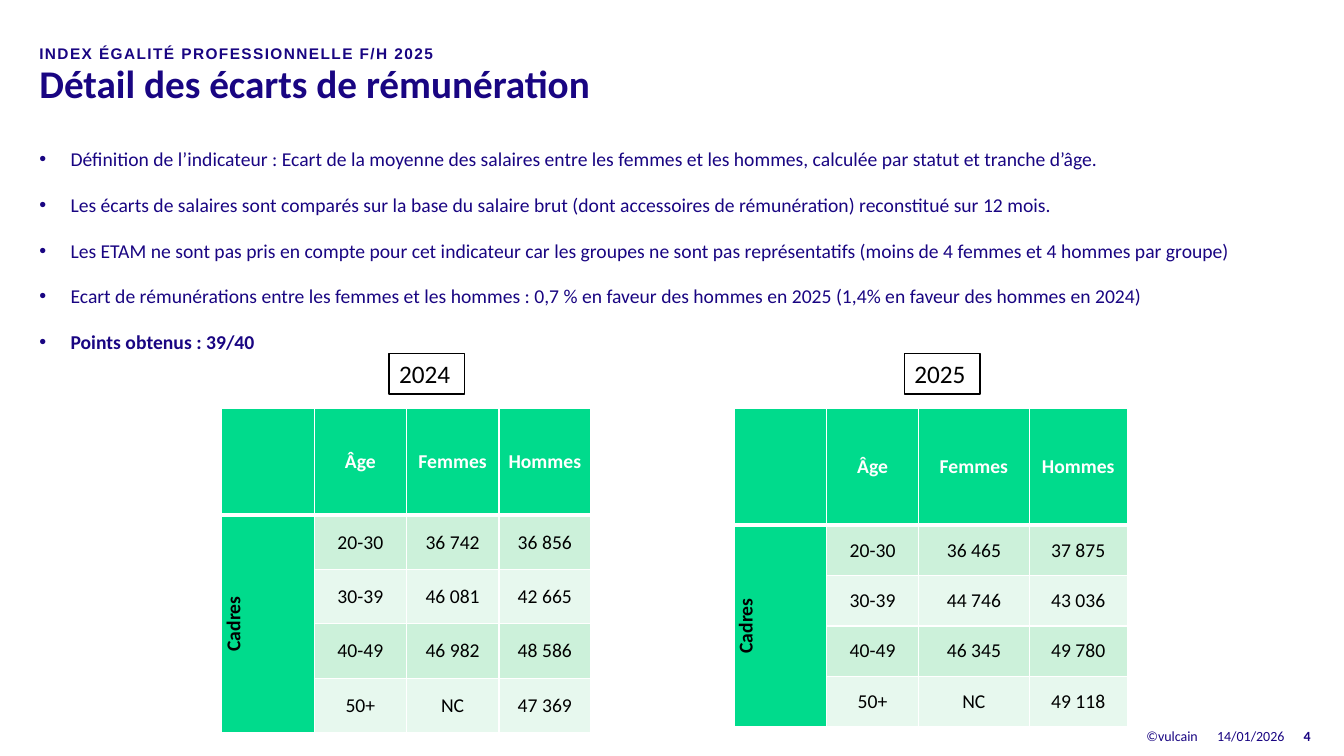
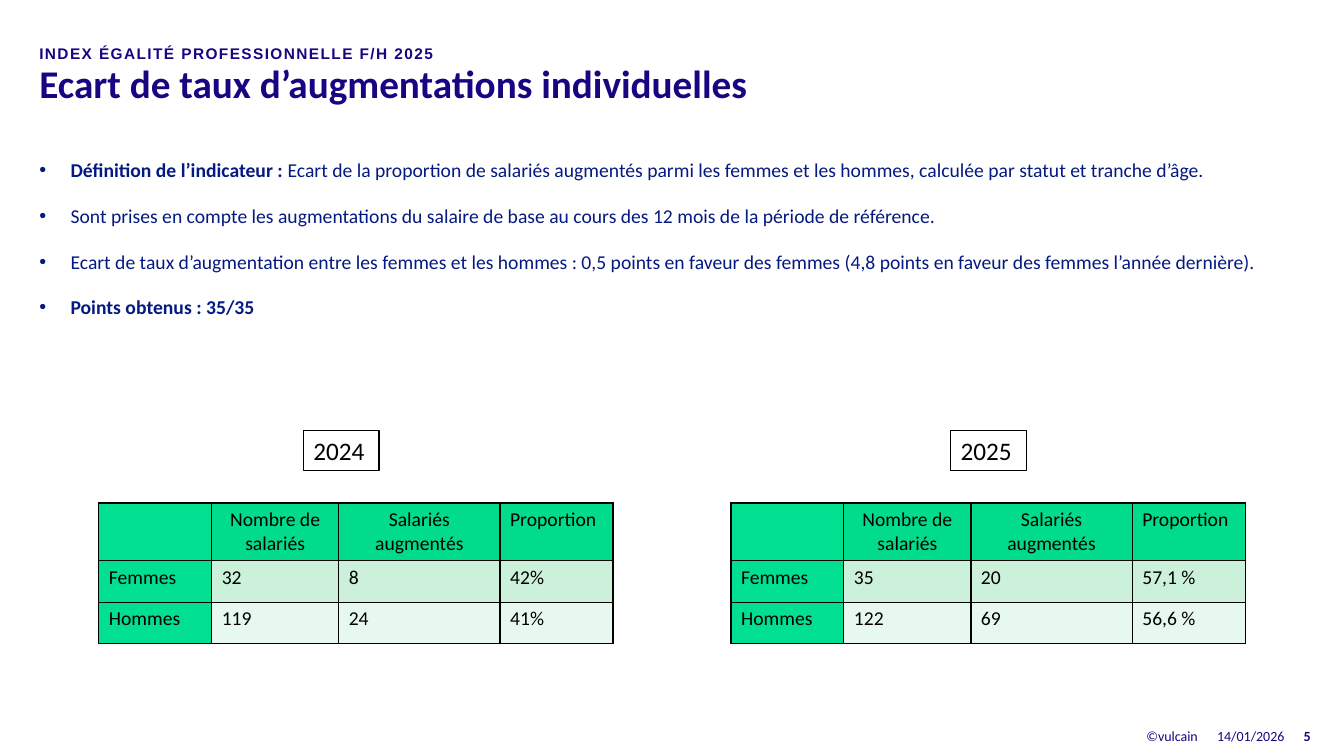
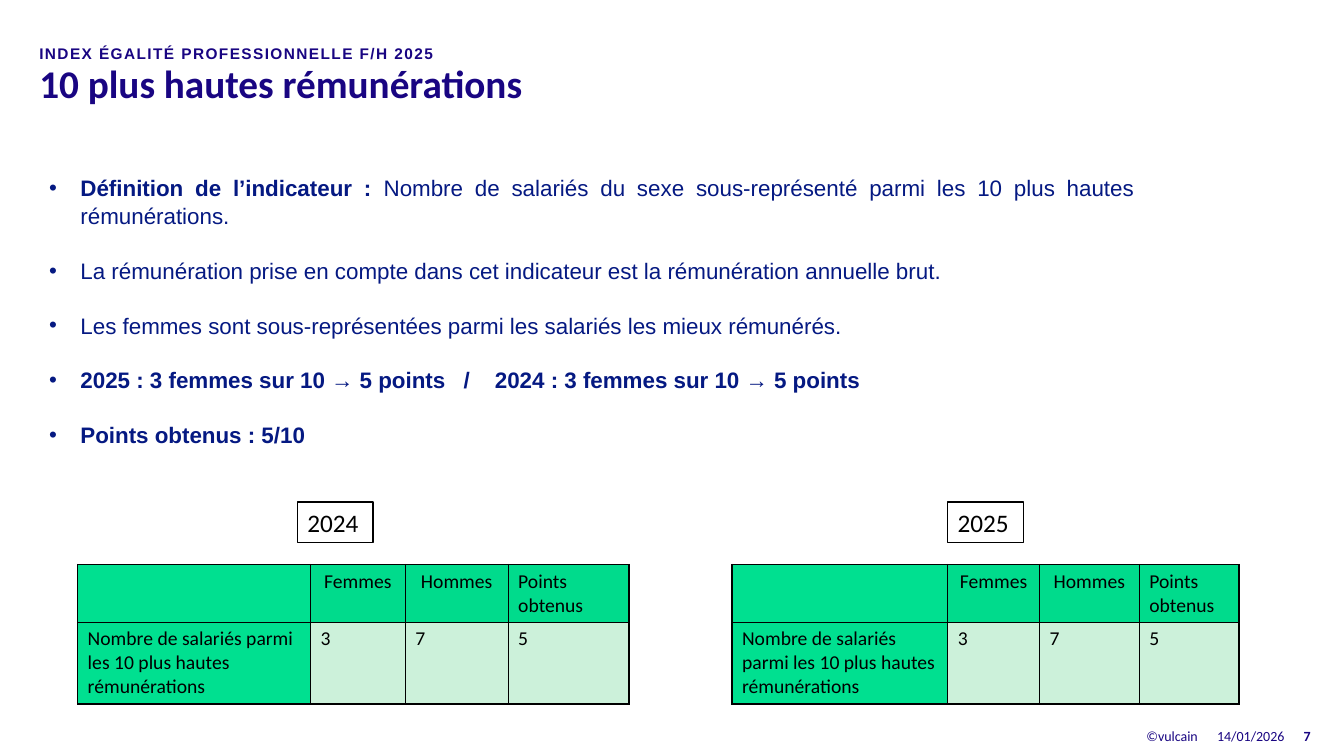
import pptx
import pptx.dml.color
import pptx.enum.shapes
import pptx.enum.text
import pptx.oxml
import pptx.oxml.ns
import pptx.util

Inches = pptx.util.Inches
Pt = pptx.util.Pt
ALIGN = pptx.enum.text.PP_ALIGN
ANCHOR = pptx.enum.text.MSO_ANCHOR
NS = pptx.oxml.ns.nsdecls("a")

COLORS = {
    "navy": "190582", "blue": "051982", "black": "000000", "white": "FFFFFF",
    "green": "00DB8C", "bright": "00E090", "band": "CCF1DA", "pale": "E7F8EE",
}

FONTS = {
    "title": ({"name": "Calibri", "size": Pt(28), "bold": True}, "navy"),
    "eyebrow": ({"name": "Arial", "size": Pt(11), "bold": True}, "navy"),
    "footer": ({"name": "Calibri", "size": Pt(10), "bold": False}, "navy"),
    "number": ({"name": "Calibri", "size": Pt(10), "bold": True}, "navy"),
    "year": ({"name": "Calibri", "size": Pt(18), "bold": False}, "black"),
    "cell": ({"name": "Calibri", "size": Pt(14), "bold": False}, "black"),
    "head": ({"name": "Calibri", "size": Pt(14), "bold": True}, "white"),
    "side": ({"name": "Calibri", "size": Pt(14), "bold": True}, "black"),
    "body": ({"name": "Calibri", "size": Pt(14)}, "navy"),
    "body_blue": ({"name": "Calibri", "size": Pt(14)}, "blue"),
    "body_arial": ({"name": "Arial", "size": Pt(16)}, "blue"),
}


class Deck:
    """Builds slides in one shared style."""

    def __init__(self):
        self.prs = pptx.Presentation()
        self.prs.slide_width = Inches(13.33)
        self.prs.slide_height = Inches(7.5)
        self.s = None

    def rgb(self, color):
        return pptx.dml.color.RGBColor.from_string(COLORS[color])

    def run(self, p, text, font, **extra):
        values, color = FONTS[font]
        r = p.add_run()
        r.text = text
        for key, value in {**values, **extra}.items():
            setattr(r.font, key, value)
        r.font.color.rgb = self.rgb(color)
        return r

    def frame(self, tf, margin=0, anchor=ANCHOR.TOP):
        values = {"margin_left": Inches(margin), "margin_right": Inches(margin),
                  "margin_top": Inches(margin / 2), "margin_bottom": Inches(margin / 2),
                  "word_wrap": True, "vertical_anchor": anchor,
                  "auto_size": pptx.enum.text.MSO_AUTO_SIZE.NONE}
        for key, value in values.items():
            setattr(tf, key, value)
        return tf

    def box(self, at, margin=0, anchor=ANCHOR.TOP):
        sp = self.s.shapes.add_textbox(*map(Inches, at))
        return self.frame(sp.text_frame, margin, anchor)

    def page(self, title, number):
        self.s = self.prs.slides.add_slide(self.prs.slide_layouts[5])
        sp = self.s.shapes.title
        sp.left, sp.top, sp.width, sp.height = map(Inches, (0.39, 0.61, 12.47, 1.05))
        p = self.frame(sp.text_frame).paragraphs[0]
        p.alignment, p.line_spacing = ALIGN.LEFT, Pt(32)
        self.run(p, title, "title")
        p = self.box((0.39, 0.31, 6.27, 0.28)).paragraphs[0]
        p.line_spacing = Pt(22.6)
        r = self.run(p, "INDEX ÉGALITÉ PROFESSIONNELLE F/H 2025", "eyebrow")
        r.font._element.set("spc", "100")
        for text, left, width, align, font in (
                ("©vulcain", 7.26, 4.62, ALIGN.RIGHT, "footer"),
                ("14/01/2026", 11.95, 0.91, ALIGN.CENTER, "footer"),
                (str(number), 12.93, 0.4, ALIGN.LEFT, "number")):
            p = self.box((left, 7.1, width, 0.4), anchor=ANCHOR.MIDDLE).paragraphs[0]
            p.alignment = align
            self.run(p, text, font)

    def bullets(self, at, items, font, align=ALIGN.JUSTIFY, margin=0,
                line=Pt(22.6), gap=10, tabs=()):
        tf = self.box(at, margin)
        for i, (lead, rest) in enumerate(items):
            p = tf.add_paragraph() if i else tf.paragraphs[0]
            pPr = p._p.get_or_add_pPr()
            pPr.set("marL", str(Inches(0.31)))
            pPr.set("indent", str(Inches(-0.31)))
            pPr.append(pptx.oxml.parse_xml(f'<a:buFont {NS} typeface="Arial"/>'))
            pPr.append(pptx.oxml.parse_xml(f'<a:buChar {NS} char="•"/>'))
            if "\t" in lead:
                stops = "".join(f'<a:tab pos="{Inches(t)}" algn="l"/>' for t in tabs)
                pPr.append(pptx.oxml.parse_xml(f"<a:tabLst {NS}>{stops}</a:tabLst>"))
            p.alignment, p.line_spacing = align, line
            if i:
                p.space_before = Pt(gap)
            for text, bold in ((lead, True), (rest, False)):
                if text:
                    self.run(p, text, font, bold=bold)

    def year(self, text, left, top):
        sp = self.s.shapes.add_shape(pptx.enum.shapes.MSO_SHAPE.RECTANGLE,
                                     *map(Inches, (left, top, 0.75, 0.4)))
        sp.shadow.inherit = False
        sp.fill.solid()
        sp.fill.fore_color.rgb = self.rgb("white")
        sp.line.color.rgb = self.rgb("black")
        sp.line.width = Pt(1)
        p = self.frame(sp.text_frame, 0.1).paragraphs[0]
        p.alignment = ALIGN.LEFT
        self.run(p, text, "year")

    def grid(self, left, top, cols, heights):
        shape = self.s.shapes.add_table(
            len(heights), len(cols), Inches(left), Inches(top),
            Inches(sum(cols)), Inches(sum(heights)))
        table = shape.table
        table.first_row = table.horz_banding = False
        for column, width in zip(table.columns, cols):
            column.width = Inches(width)
        for row, height in zip(table.rows, heights):
            row.height = Inches(height)
        return table

    def cell(self, cell, text, font, fill, line, align, thick=""):
        tcPr = cell._tc.get_or_add_tcPr()
        for side in "LRTB":
            width = Pt(3 if side == thick else 1)
            tcPr.append(pptx.oxml.parse_xml(
                f'<a:ln{side} {NS} w="{width}"><a:solidFill>'
                f'<a:srgbClr val="{COLORS[line]}"/></a:solidFill></a:ln{side}>'))
        cell.fill.solid()
        cell.fill.fore_color.rgb = self.rgb(fill)
        p = cell.text_frame.paragraphs[0]
        p.alignment = align
        if text:
            self.run(p, text, font)

    def pay_table(self, left, cols, heights, rows):
        table = self.grid(left, 4.05, cols, heights)
        data = [("", "Âge", "Femmes", "Hommes")]
        data += [("" if i else "Cadres", *row) for i, row in enumerate(rows)]
        for i, row in enumerate(data):
            for j, text in enumerate(row):
                cell = table.cell(i, j)
                for key in ("left", "right", "top", "bottom"):
                    setattr(cell, "margin_" + key, 0)
                cell.vertical_anchor = ANCHOR.MIDDLE
                font = "head" if i == 0 else "side" if j == 0 else "cell"
                fill = "green" if 0 in (i, j) else "band" if i % 2 else "pale"
                self.cell(cell, text, font, fill, "white", ALIGN.CENTER,
                          {0: "B", 1: "T"}.get(i, ""))
        side = table.cell(1, 0)
        side.merge(table.cell(len(rows), 0))
        side._tc.tcPr.set("vert", "vert270")

    def count_table(self, left, top, cols, heights, rows):
        table = self.grid(left, top, cols, heights)
        for i, row in enumerate(rows):
            for j, text in enumerate(row):
                fill = ("bright" if j == 0 else "green" if i == 0
                        else "band" if i % 2 else "pale")
                align = ALIGN.CENTER if i == 0 and j in (1, 2) else ALIGN.LEFT
                self.cell(table.cell(i, j), text, "cell", fill, "black", align)


def main():
    deck = Deck()

    deck.page("Détail des écarts de rémunération", 4)
    deck.bullets((0.39, 1.38, 12.47, 2.3), [
        ("", "Définition de l’indicateur : Ecart de la moyenne des salaires entre les femmes et les hommes, calculée par statut et tranche d’âge."),
        ("", "Les écarts de salaires sont comparés sur la base du salaire brut (dont accessoires de rémunération) reconstitué sur 12 mois."),
        ("", "Les ETAM ne sont pas pris en compte pour cet indicateur car les groupes ne sont pas représentatifs (moins de 4 femmes et 4 hommes par groupe)"),
        ("", "Ecart de rémunérations entre les femmes et les hommes : 0,7 % en faveur des hommes en 2025 (1,4% en faveur des hommes en 2024)"),
        ("Points obtenus : 39/40", ""),
    ], "body", ALIGN.LEFT)
    deck.pay_table(2.2, (0.92, 0.91, 0.92, 0.91), [1.06] + [0.54] * 4, [
        ("20-30", "36 742", "36 856"), ("30-39", "46 081", "42 665"),
        ("40-49", "46 982", "48 586"), ("50+", "NC", "47 369")])
    deck.pay_table(7.28, (0.92, 0.91, 1.1, 0.97), [1.16] + [0.5] * 4, [
        ("20-30", "36 465", "37 875"), ("30-39", "44 746", "43 036"),
        ("40-49", "46 345", "49 780"), ("50+", "NC", "49 118")])
    deck.year("2024", 3.86, 3.51)
    deck.year("2025", 8.97, 3.51)

    deck.page("Ecart de taux d’augmentations individuelles", 5)
    deck.bullets((0.39, 1.49, 12.47, 4.98), [
        ("Définition de l’indicateur : ", "Ecart de la proportion de salariés augmentés parmi les femmes et les hommes, calculée par statut et tranche d’âge."),
        ("", "Sont prises en compte les augmentations du salaire de base au cours des 12 mois de la période de référence."),
        ("", "Ecart de taux d’augmentation entre les femmes et les hommes : 0,5 points en faveur des femmes (4,8 points en faveur des femmes l’année dernière)."),
        ("Points obtenus : 35/35", ""),
    ], "body_blue")
    for year, year_left, left, women, men in (
            ("2024", 3.01, 0.98, ("32", "8", "42%"), ("119", "24", "41%")),
            ("2025", 9.43, 7.25, ("35", "20", "57,1 %"), ("122", "69", "56,6 %"))):
        deck.count_table(left, 4.99, (1.12, 1.26, 1.6, 1.12), (0.57, 0.41, 0.41), [
            ("", "Nombre de salariés", "Salariés augmentés", "Proportion"),
            ("Femmes", *women), ("Hommes", *men)])
        deck.year(year, year_left, 4.27)

    deck.page("10 plus hautes rémunérations", 7)
    deck.bullets((0.39, 1.67, 10.96, 3.1), [
        ("Définition de l’indicateur : ", "Nombre de salariés du sexe sous-représenté parmi les 10 plus hautes rémunérations."),
        ("", "La rémunération prise en compte dans cet indicateur est la rémunération annuelle brut."),
        ("", "Les femmes sont sous-représentées parmi les salariés les mieux rémunérés."),
        ("2025 : 3 femmes sur 10 → 5 points\t/\t2024 : 3 femmes sur 10 → 5 points", ""),
        ("Points obtenus : 5/10", ""),
    ], "body_arial", margin=0.1, line=1.04, gap=19.1, tabs=(4.11, 4.42))
    for year, year_left, left, cols in (
            ("2024", 2.95, 0.77, (2.31, 0.94, 1.02, 1.2)),
            ("2025", 9.4, 7.26, (2.14, 0.91, 0.99, 0.99))):
        deck.count_table(left, 5.6, cols, (0.57, 0.8), [
            ("", "Femmes", "Hommes", "Points obtenus"),
            ("Nombre de salariés parmi les 10 plus hautes rémunérations", "3", "7", "5")])
        deck.year(year, year_left, 4.98)

    deck.prs.save("out.pptx")


if __name__ == "__main__":
    main()
